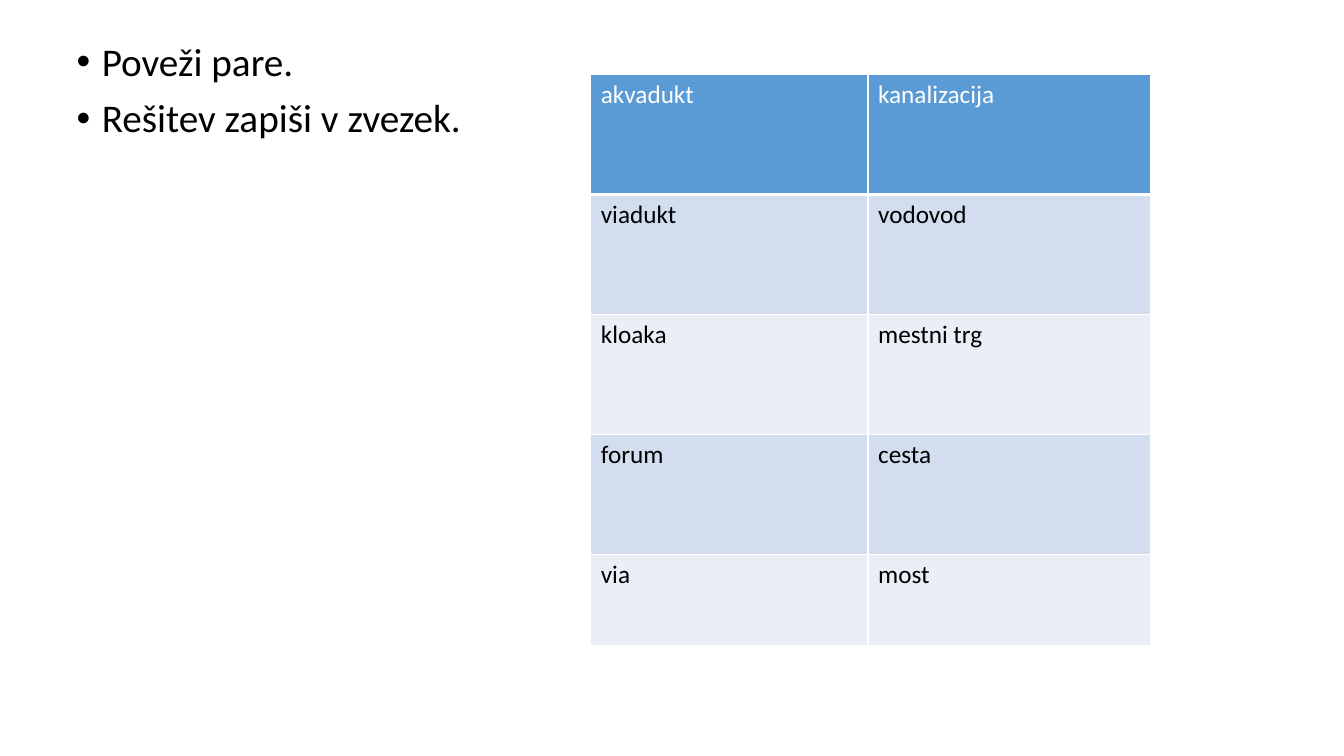
import dataclasses

import lxml.etree
import pptx
import pptx.dml.color
import pptx.oxml.ns
import pptx.util

PX = 9144


@dataclasses.dataclass(frozen=True)
class Theme:
    """Colours, font and type sizes of the slide."""

    font: str = "Calibri"
    body_size: int = 28
    cell_size: int = 18
    text: str = "000000"
    header_text: str = "FFFFFF"
    header_fill: str = "5B9BD5"
    bands: tuple = ("D2DEEF", "EAEFF7")
    border: str = "FFFFFF"
    border_width: int = 1
    header_rule: int = 3


THEME = Theme()
INSTRUCTIONS = ["Poveži pare.", "Rešitev zapiši v zvezek."]
PAIRS = [
    ("akvadukt", "kanalizacija"),
    ("viadukt", "vodovod"),
    ("kloaka", "mestni trg"),
    ("forum", "cesta"),
    ("via", "most"),
]
COLUMN_WIDTHS = [275, 280]
ROW_HEIGHTS = [119] * 4 + [91]


def px(length):
    """Turn a length in px into EMU."""
    return pptx.util.Emu(length * PX)


def rgb(value):
    """Turn a hex string into a colour."""
    return pptx.dml.color.RGBColor.from_string(value)


def child(parent, tag, **attributes):
    """Append a drawing element to a parent element."""
    return lxml.etree.SubElement(parent, pptx.oxml.ns.qn(tag), **attributes)


def add_span(para, text, size, color):
    """Add one formatted run to a paragraph."""
    span = para.add_run()
    span.text = text
    span.font.name = THEME.font
    span.font.size = pptx.util.Pt(size)
    span.font.bold = False
    span.font.color.rgb = rgb(color)


def set_bullet(para, indent):
    """Give a paragraph a round bullet with a hanging indent."""
    properties = para._p.get_or_add_pPr()
    properties.set("marL", str(px(indent)))
    properties.set("indent", str(-px(indent)))
    child(properties, "a:buFont", typeface="Arial")
    child(properties, "a:buChar", char="•")


def fill_body(box, lines, left, top, width, height):
    """Place the body placeholder and write its bulleted lines."""
    box.left, box.top = px(left), px(top)
    box.width, box.height = px(width), px(height)
    frame = box.text_frame
    for index, line in enumerate(lines):
        para = frame.add_paragraph() if index else frame.paragraphs[0]
        para.line_spacing = 0.9
        para.space_before = pptx.util.Pt(10)
        set_bullet(para, 25)
        add_span(para, line, THEME.body_size, THEME.text)


def set_borders(cell, bottom_width):
    """Draw solid borders on the four sides of a cell."""
    properties = cell._tc.get_or_add_tcPr()
    for side in "LRTB":
        width = bottom_width if side == "B" else THEME.border_width
        line = child(properties, f"a:ln{side}", w=str(pptx.util.Pt(width)))
        child(child(line, "a:solidFill"), "a:srgbClr", val=THEME.border)


def format_cell(cell, text, row):
    """Write a cell and style it as header or band."""
    header = row == 0
    set_borders(cell, THEME.header_rule if header else THEME.border_width)
    cell.fill.solid()
    fill = THEME.header_fill if header else THEME.bands[(row - 1) % 2]
    cell.fill.fore_color.rgb = rgb(fill)
    color = THEME.header_text if header else THEME.text
    add_span(cell.text_frame.paragraphs[0], text, THEME.cell_size, color)


def add_pairs_table(page, left, top):
    """Add the table of words to be paired."""
    table = page.shapes.add_table(
        len(PAIRS), len(COLUMN_WIDTHS), px(left), px(top),
        px(sum(COLUMN_WIDTHS)), px(sum(ROW_HEIGHTS)),
    ).table
    table.horz_banding = False
    for column, width in zip(table.columns, COLUMN_WIDTHS):
        column.width = px(width)
    for row, height in zip(table.rows, ROW_HEIGHTS):
        row.height = px(height)
    for row, words in enumerate(PAIRS):
        for column, word in enumerate(words):
            format_cell(table.cell(row, column), word, row)


def main():
    """Build the slide and save the deck."""
    deck = pptx.Presentation()
    deck.slide_width, deck.slide_height = px(1333), px(750)
    page = deck.slides.add_slide(deck.slide_layouts[1])
    title = page.shapes.title._element
    title.getparent().remove(title)
    fill_body(page.placeholders[1], INSTRUCTIONS, 66, 37, 1175, 638)
    add_pairs_table(page, 586, 74)
    deck.save("out.pptx")


if __name__ == "__main__":
    main()
